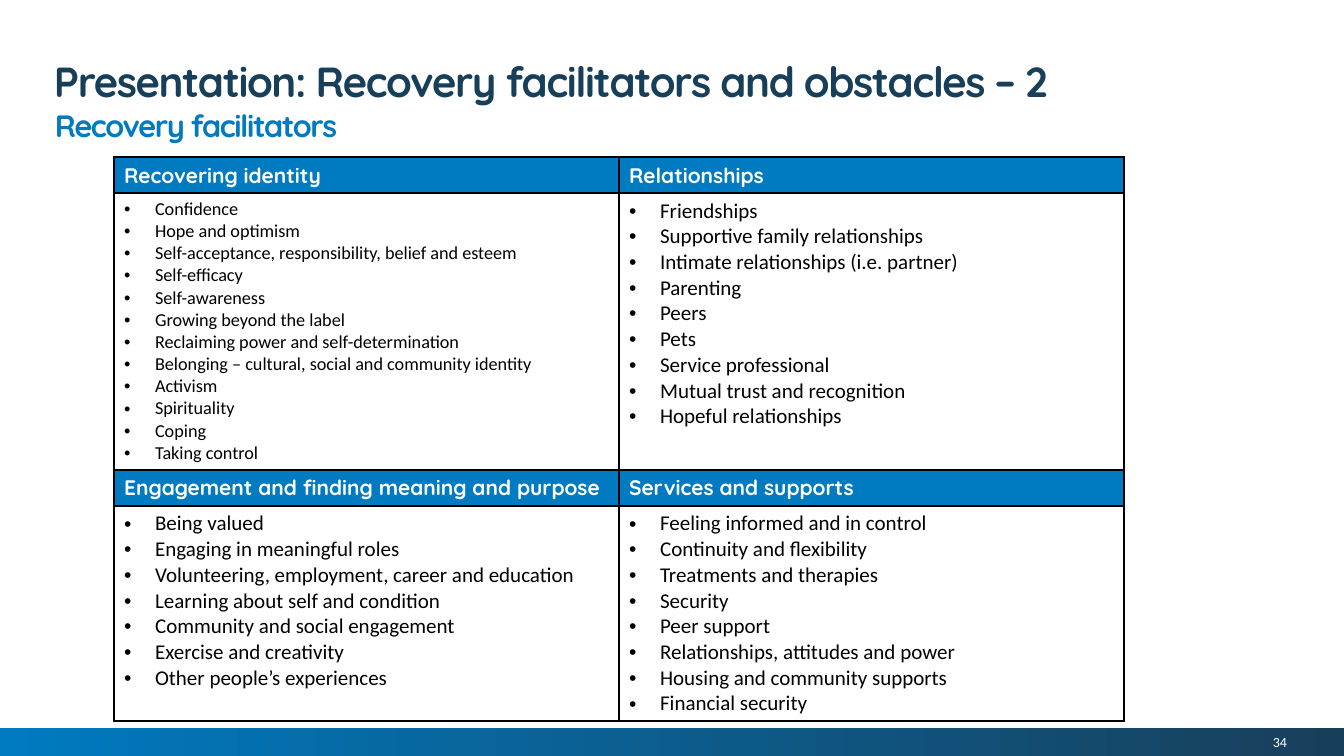
from lxml.etree import SubElement
from pptx import Presentation
from pptx.dml.color import RGBColor
from pptx.enum.shapes import MSO_SHAPE
from pptx.enum.text import MSO_ANCHOR, PP_ALIGN
from pptx.oxml.ns import qn
from pptx.util import Emu, Pt

SLIDE_WIDTH, SLIDE_HEIGHT = 1344, 756
EMU_PER_PX = 914400 / 100.8
BLUE, NAVY, WHITE, BLACK = "007AC0", "183F5A", "FFFFFF", "000000"
HEADING_FONT, BODY_FONT = "Quicksand", "Calibri"
BULLET_INDENT = 31

# Each theme: heading, point size of its list, list entries
THEMES = [
    [
        ("Recovering identity", 13, [
            "Confidence",
            "Hope and optimism",
            "Self-acceptance, responsibility, belief and esteem",
            "Self-efficacy",
            "Self-awareness",
            "Growing beyond the label",
            "Reclaiming power and self-determination",
            "Belonging – cultural, social and community identity",
            "Activism",
            "Spirituality",
            "Coping",
            "Taking control",
        ]),
        ("Relationships", 15, [
            "Friendships",
            "Supportive family relationships",
            "Intimate relationships (i.e. partner)",
            "Parenting",
            "Peers",
            "Pets",
            "Service professional",
            "Mutual trust and recognition",
            "Hopeful relationships",
        ]),
    ],
    [
        ("Engagement and finding meaning and purpose", 15, [
            "Being valued",
            "Engaging in meaningful roles",
            "Volunteering, employment, career and education",
            "Learning about self and condition",
            "Community and social engagement",
            "Exercise and creativity",
            "Other people’s experiences",
        ]),
        ("Services and supports", 15, [
            "Feeling informed and in control",
            "Continuity and flexibility",
            "Treatments and therapies",
            "Security",
            "Peer support",
            "Relationships, attitudes and power",
            "Housing and community supports",
            "Financial security",
        ]),
    ],
]


def px(length):
    return Emu(round(length * EMU_PER_PX))


def color(hex_code):
    return RGBColor.from_string(hex_code)


def set_font(paragraph, name, size, hex_code, bold=False):
    font = paragraph.font
    font.name, font.size, font.bold = name, Pt(size), bold
    font.color.rgb = color(hex_code)


def add_text(slide, box, text, anchor, inset=(0, 0)):
    """Add a one-paragraph text box and return its paragraph."""
    frame = slide.shapes.add_textbox(*map(px, box)).text_frame
    frame.word_wrap = True
    frame.vertical_anchor = anchor
    frame.margin_left = frame.margin_right = px(inset[0])
    frame.margin_top = frame.margin_bottom = px(inset[1])
    paragraph = frame.paragraphs[0]
    paragraph.text = text
    return paragraph


def add_heading(slide, box, text, size, hex_code, anchor, inset=(0, 0)):
    paragraph = add_text(slide, box, text, anchor, inset)
    paragraph.line_spacing = Pt(33)
    set_font(paragraph, HEADING_FONT, size, hex_code, bold=True)
    paragraph._p.pPr.find(qn("a:defRPr")).set("spc", "-100")


def add_footer(slide, number):
    top = 728
    band = slide.shapes.add_shape(
        MSO_SHAPE.RECTANGLE, 0, px(top), px(SLIDE_WIDTH), px(SLIDE_HEIGHT - top))
    band.shadow.inherit = False
    band.line.fill.background()
    band.fill.gradient()
    band.fill.gradient_angle = 0
    for stop, hex_code in zip(band.fill.gradient_stops, (BLUE, NAVY)):
        stop.color.rgb = color(hex_code)
    paragraph = add_text(slide, (1106, 730, 181, 24), number, MSO_ANCHOR.MIDDLE)
    paragraph.alignment = PP_ALIGN.RIGHT
    set_font(paragraph, BODY_FONT, 10, WHITE)


def add_borders(cell):
    properties = cell._tc.get_or_add_tcPr()
    for side in ("lnL", "lnR", "lnT", "lnB"):
        border = SubElement(properties, qn(f"a:{side}"), w=str(Pt(1)))
        fill = SubElement(border, qn("a:solidFill"))
        SubElement(fill, qn("a:srgbClr"), val=BLACK)


def add_bullet(paragraph):
    properties = paragraph._p.get_or_add_pPr()
    properties.set("marL", str(px(BULLET_INDENT)))
    properties.set("indent", str(-px(BULLET_INDENT)))
    SubElement(properties, qn("a:buFont"), typeface="Arial")
    SubElement(properties, qn("a:buChar"), char="•")


def fill_heading_cell(cell, heading):
    add_borders(cell)
    cell.fill.solid()
    cell.fill.fore_color.rgb = color(BLUE)
    cell.text = heading
    set_font(cell.text_frame.paragraphs[0], HEADING_FONT, 15, WHITE, bold=True)


def fill_list_cell(cell, entries, size):
    add_borders(cell)
    cell.fill.background()
    cell.text = "\n".join(entries)
    for paragraph in cell.text_frame.paragraphs:
        add_bullet(paragraph)
        set_font(paragraph, BODY_FONT, size, BLACK)


def add_theme_table(slide, left, top, column_width, row_heights):
    columns = len(THEMES[0])
    table = slide.shapes.add_table(
        len(row_heights), columns, px(left), px(top),
        px(column_width * columns), px(sum(row_heights))).table
    table.first_row = table.horz_banding = False
    for column in table.columns:
        column.width = px(column_width)
    for row, height in zip(table.rows, row_heights):
        row.height = px(height)
    for band, themes in enumerate(THEMES):
        for column, (heading, size, entries) in enumerate(themes):
            fill_heading_cell(table.cell(2 * band, column), heading)
            fill_list_cell(table.cell(2 * band + 1, column), entries, size)


def main():
    presentation = Presentation()
    presentation.slide_width = px(SLIDE_WIDTH)
    presentation.slide_height = px(SLIDE_HEIGHT)
    slide = presentation.slides.add_slide(presentation.slide_layouts[6])
    add_footer(slide, "34")
    add_heading(slide, (55, 105, 1232, 39), "Recovery facilitators",
                22, BLUE, MSO_ANCHOR.BOTTOM)
    add_heading(slide, (44, 55, 1080, 47),
                "Presentation: Recovery facilitators and obstacles – 2",
                30, NAVY, MSO_ANCHOR.TOP, inset=(10, 5))
    add_theme_table(slide, 114, 157, 505, (36, 277, 36, 215))
    presentation.save("out.pptx")


if __name__ == "__main__":
    main()
